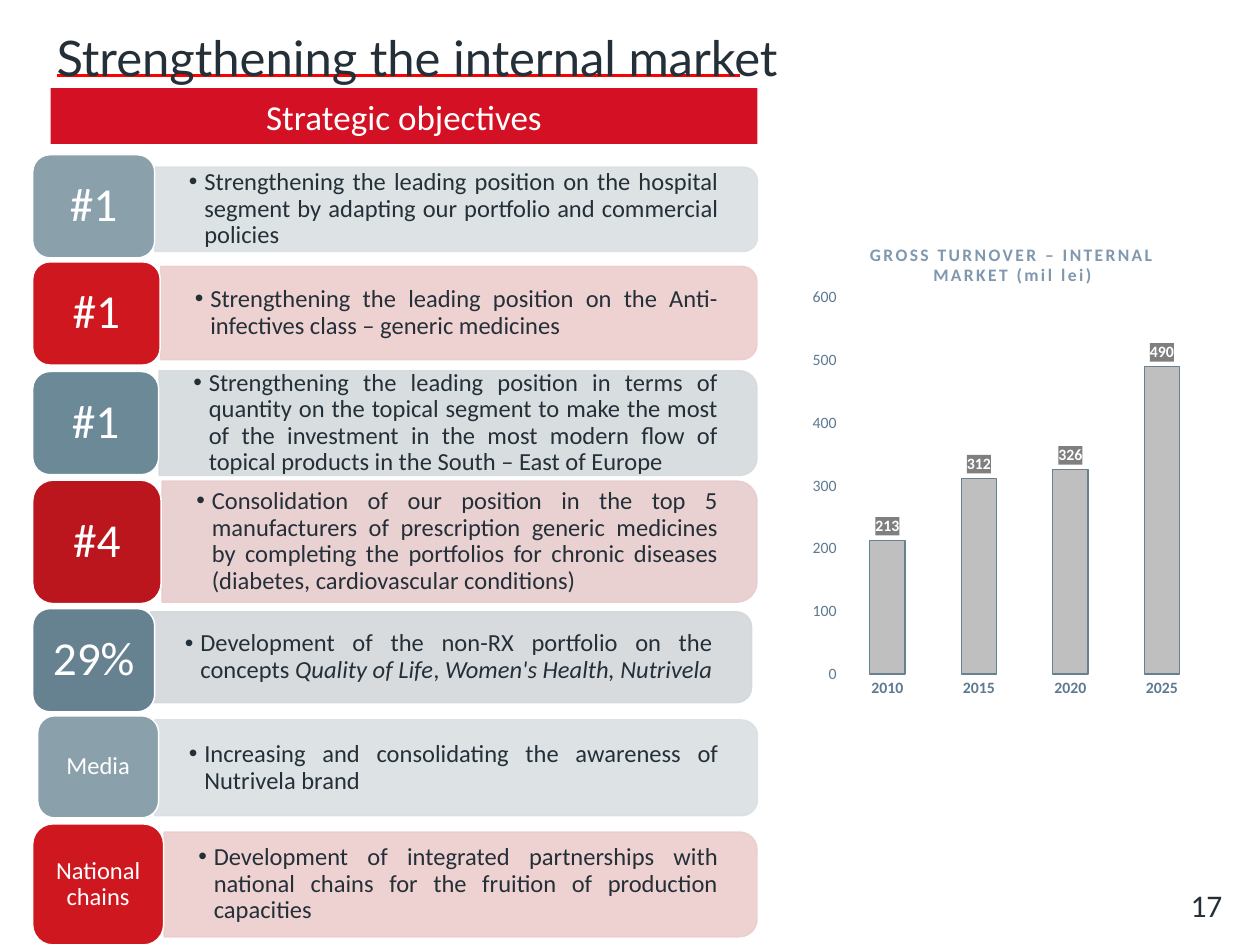
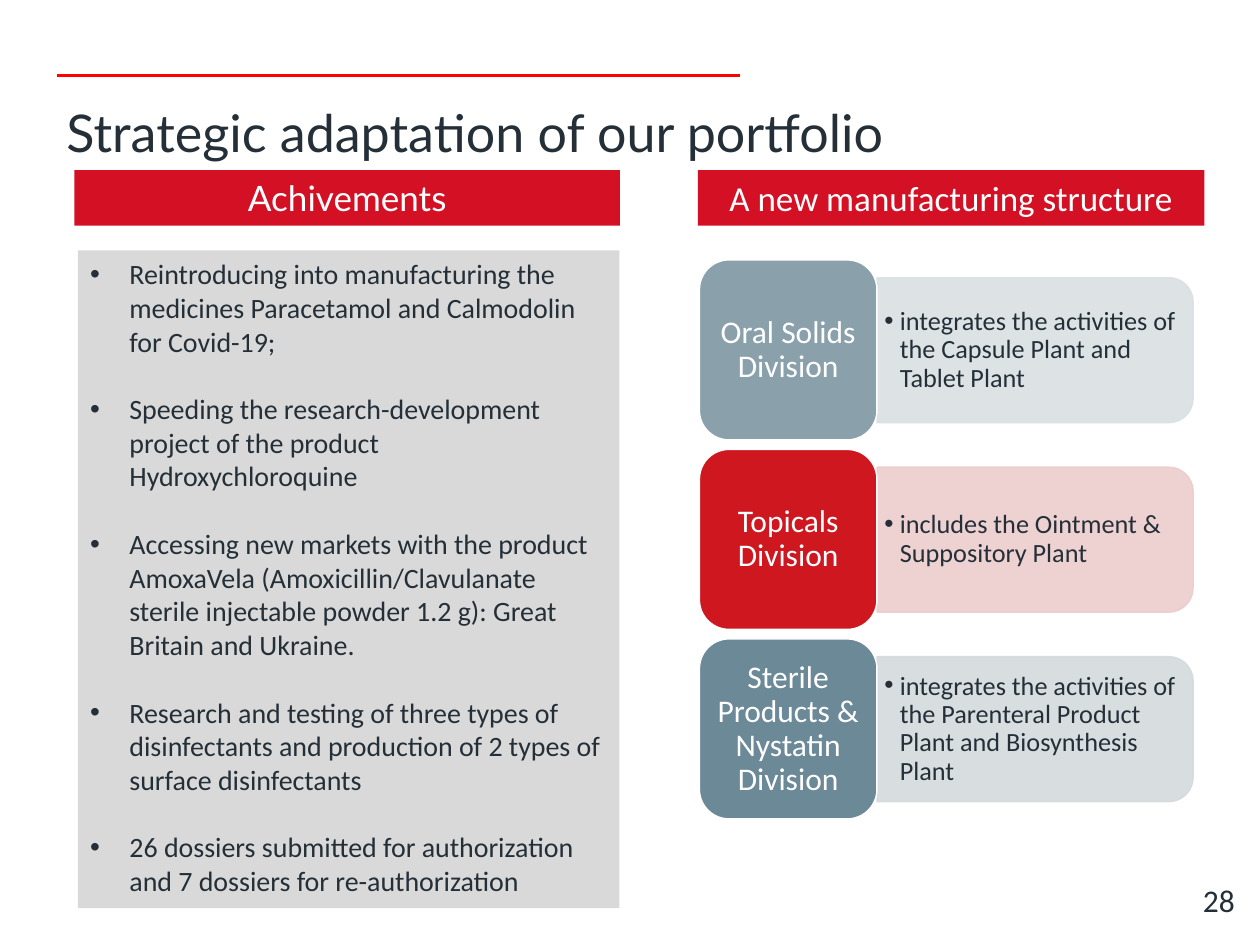
from dataclasses import dataclass

from lxml import etree
from pptx import Presentation
from pptx.chart.data import CategoryChartData
from pptx.dml.color import RGBColor
from pptx.enum import chart as ch, shapes, text
from pptx.oxml import parse_xml
from pptx.oxml.ns import nsdecls, qn
from pptx.util import Cm, Pt


@dataclass(frozen=True)
class Theme:
    # Fonts
    body_font: str = "Calibri"
    title_font: str = "Lato"
    # Colours
    ink: str = "242F38"
    white: str = "FFFFFF"
    rule: str = "FF0000"
    band: str = "D41024"
    panel: str = "D9D9D9"
    axis: str = "5D7A91"
    chart_title: str = "7F98AE"
    column: str = "BFBFBF"
    column_line: str = "668290"
    label_fill: str = "7F7F7F"
    # Tile and bar colour pairs
    mist: tuple = ("8AA1AC", "DAE0E3")
    red: tuple = ("CF1720", "EDCCCD")
    steel: tuple = ("6C8997", "D4DADD")
    dark_red: tuple = ("BB151D", "E7CCCD")
    slate: tuple = ("668290", "D3D8DB")
    # Type sizes
    band_size: float = 20
    number_size: float = 18
    rank_size: float = 27
    objective_size: float = 14
    division_size: float = 18
    activity_size: float = 15
    panel_size: float = 16
    chart_title_size: float = 10
    axis_size: float = 9


T = Theme()
ALIGN = text.PP_ALIGN
ANCHOR = text.MSO_ANCHOR


def rgb(value):
    return RGBColor.from_string(value)


def set_font(font, size, color, name=T.body_font, bold=None, italic=None):
    font.size, font.name, font.bold, font.italic = Pt(size), name, bold, italic
    font.color.rgb = rgb(color)


def add_bullet(p, indent):
    pPr = p._p.get_or_add_pPr()
    pPr.set("marL", str(Cm(indent)))
    pPr.set("indent", str(-Cm(indent)))
    etree.SubElement(pPr, qn("a:buFont")).set("typeface", "Arial")
    etree.SubElement(pPr, qn("a:buChar")).set("char", "•")


def add_runs(p, runs, size, color, name=T.body_font):
    """Add a string, or a list of (string, italic) pairs."""
    for words, italic in [(runs, None)] if isinstance(runs, str) else runs:
        r = p.add_run()
        r.text = words
        set_font(r.font, size, color, name, italic=italic)


def set_frame(tf, anchor, inset_x=0.25, inset_y=0.13):
    tf.word_wrap = True
    tf.auto_size = text.MSO_AUTO_SIZE.NONE
    tf.vertical_anchor = anchor
    tf.margin_left = tf.margin_right = Cm(inset_x)
    tf.margin_top = tf.margin_bottom = Cm(inset_y)


def add_shape(s, kind, box, fill, line=None):
    sp = s.shapes.add_shape(kind, *map(Cm, box))
    sp.shadow.inherit = False
    sp.fill.solid()
    sp.fill.fore_color.rgb = rgb(fill)
    if line:
        sp.line.color.rgb = rgb(line)
        sp.line.width = Pt(0.85)
    else:
        sp.line.fill.background()
    return sp


def add_textbox(s, box, anchor=ANCHOR.TOP, **insets):
    tf = s.shapes.add_textbox(*map(Cm, box)).text_frame
    set_frame(tf, anchor, **insets)
    return tf


def add_base(prs, title, title_box, title_size, number, number_box):
    """Slide with title, red rule behind it and page number."""
    s = prs.slides.add_slide(prs.slide_layouts[5])
    sp = s.shapes.title
    sp.left, sp.top, sp.width, sp.height = map(Cm, title_box)
    set_frame(sp.text_frame, ANCHOR.BOTTOM)
    p = sp.text_frame.paragraphs[0]
    p.alignment = ALIGN.LEFT
    add_runs(p, title, title_size, T.ink, T.title_font)

    rule = s.shapes.add_connector(shapes.MSO_CONNECTOR.STRAIGHT,
                                  Cm(1.14), Cm(1.52), Cm(14.91), Cm(1.52))
    rule.line.color.rgb = rgb(T.rule)
    rule.line.width = Pt(1.5)
    etree.SubElement(rule.element.spPr, qn("a:effectLst"))
    sp.element.addprevious(rule.element)

    tf = add_textbox(s, number_box)
    add_runs(tf.paragraphs[0], number, T.number_size, T.ink)
    return s


def add_band(s, box, words, font=T.body_font):
    sp = add_shape(s, shapes.MSO_SHAPE.RECTANGLE, box, T.band)
    set_frame(sp.text_frame, ANCHOR.MIDDLE)
    p = sp.text_frame.paragraphs[0]
    p.alignment = ALIGN.CENTER
    add_runs(p, words, T.band_size, T.white, font)


def add_bar(s, left, right, middle, height, color):
    """Bar rounded on its right side: a top-rounded shape turned by 90°."""
    width = right - left
    box = ((left + right - height) / 2, middle - width / 2, height, width)
    sp = add_shape(s, shapes.MSO_SHAPE.ROUND_2_SAME_RECTANGLE, box, color, color)
    sp.rotation = 90
    for clr in sp.element.spPr.iter(qn("a:srgbClr")):
        etree.SubElement(clr, qn("a:alpha")).set("val", "90000")


def add_tile_row(s, tile, bar, colors, label, label_size, runs, size, align, insets):
    """Tile is (left, top, width, height); bar is (left, right, middle, height)."""
    tile_color, bar_color = colors
    add_bar(s, *bar, bar_color)
    left, right, middle, height = bar
    text_height = height - 0.18
    tf = add_textbox(s, (left, middle - text_height / 2, right - left - 0.09, text_height),
                     ANCHOR.MIDDLE, **insets)
    p = tf.paragraphs[0]
    add_bullet(p, 0.31)
    p.alignment, p.line_spacing = align, 0.9
    add_runs(p, runs, size, T.ink)

    sp = add_shape(s, shapes.MSO_SHAPE.ROUNDED_RECTANGLE, tile, tile_color, T.white)
    set_frame(sp.text_frame, ANCHOR.MIDDLE, label_size * 0.01, label_size * 0.005)
    p = sp.text_frame.paragraphs[0]
    p.alignment, p.line_spacing = ALIGN.CENTER, 0.9
    add_runs(p, label, label_size, T.white)


def add_bullet_panel(s, box, items):
    sp = add_shape(s, shapes.MSO_SHAPE.RECTANGLE, box, T.panel)
    tf = sp.text_frame
    set_frame(tf, ANCHOR.TOP)
    for i, item in enumerate(items):
        p = tf.add_paragraph() if i else tf.paragraphs[0]
        add_bullet(p, 0.79)
        p.alignment = ALIGN.LEFT
        if i:
            p.space_before = Pt(19.5)
        add_runs(p, item, T.panel_size, T.ink)


def add_turnover_chart(s, box, title, years, values):
    data = CategoryChartData()
    data.categories = years
    data.add_series("Series 1", values)
    chart = s.shapes.add_chart(ch.XL_CHART_TYPE.COLUMN_CLUSTERED, *map(Cm, box), data).chart
    set_font(chart.font, T.chart_title_size, T.ink)
    chart.has_legend = False

    # Title with wide letter spacing
    chart.has_title = True
    p = chart.chart_title.text_frame.paragraphs[0]
    r = p.add_run()
    r.text = title
    set_font(r.font, T.chart_title_size, T.chart_title, bold=True)
    r.font._element.set("spc", "150")

    # Axes
    for axis, bold in ((chart.category_axis, True), (chart.value_axis, False)):
        axis.has_major_gridlines = False
        axis.major_tick_mark = axis.minor_tick_mark = ch.XL_TICK_MARK.NONE
        axis.format.line.fill.background()
        set_font(axis.tick_labels.font, T.axis_size, T.axis, bold=bold)
    axis = chart.value_axis
    axis.minimum_scale, axis.maximum_scale, axis.major_unit = 0, 600, 100
    axis.tick_labels.number_format = "0"
    axis.tick_labels.number_format_is_linked = False

    # Columns and their labels
    plot = chart.plots[0]
    plot.gap_width = 160
    plot.vary_by_categories = False
    fmt = plot.series[0].format
    fmt.fill.solid()
    fmt.fill.fore_color.rgb = rgb(T.column)
    fmt.line.color.rgb = rgb(T.column_line)
    fmt.line.width = Pt(0.75)
    labels = plot.series[0].data_labels
    labels.show_value = True
    labels.number_format, labels.number_format_is_linked = "0", False
    labels.position = ch.XL_LABEL_POSITION.OUTSIDE_END
    set_font(labels.font, T.axis_size, T.white, bold=True)
    labels._element.find(qn("c:txPr")).addprevious(parse_xml(
        f'<c:spPr {nsdecls("c", "a")}><a:solidFill><a:srgbClr val="{T.label_fill}"/>'
        "</a:solidFill></c:spPr>"))

    # Fixed inner plot area
    area = chart._chartSpace.chart.plotArea
    for old in area.findall(qn("c:layout")):
        area.remove(old)
    parts = (("layoutTarget", "inner"), ("xMode", "edge"), ("yMode", "edge"),
             ("x", 0.08), ("y", 0.15), ("w", 0.9), ("h", 0.77))
    layout = etree.Element(qn("c:layout"))
    manual = etree.SubElement(layout, qn("c:manualLayout"))
    for tag, val in parts:
        etree.SubElement(manual, qn(f"c:{tag}")).set("val", str(val))
    area.insert(0, layout)


def build_market_slide(prs):
    s = add_base(prs, "Strengthening the internal market", (0.89, -0.08, 22.86, 1.96), 28,
                 "17", (23.75, 17.73, 1.6, 0.94))
    rank, small = T.rank_size, T.objective_size
    rows = [
        ((0.66, 3.12, 2.46, 2.08), (3.12, 15.27, 4.22, 1.7), T.mist, "#1", rank,
         "Strengthening the leading position on the hospital segment by adapting "
         "our portfolio and commercial policies"),
        ((0.66, 5.28, 2.57, 2.08), (3.24, 15.26, 6.31, 1.88), T.red, "#1", rank,
         "Strengthening the leading position on the Anti-infectives class – generic medicines"),
        ((0.66, 7.49, 2.54, 2.08), (3.21, 15.26, 8.53, 2.11), T.steel, "#1", rank,
         "Strengthening the leading position in terms of quantity on the topical segment "
         "to make the most of the investment in the most modern flow of topical products "
         "in the South – East of Europe"),
        ((0.66, 9.68, 2.59, 2.49), (3.27, 15.26, 10.92, 2.44), T.dark_red, "#4", rank,
         "Consolidation of our position in the top 5 manufacturers of prescription generic "
         "medicines by completing the portfolios for chronic diseases (diabetes, "
         "cardiovascular conditions)"),
        ((0.66, 12.27, 2.46, 2.08), (3.04, 15.15, 13.25, 1.83), T.slate, "29%", rank,
         [("Development of the non-RX portfolio on the concepts ", None),
          ("Quality of Life", True), (", ", None), ("Women's Health, Nutrivela", True)]),
        ((0.76, 14.43, 2.44, 2.06), (3.12, 15.27, 15.48, 1.93), T.mist, "Media", small,
         "Increasing and consolidating the awareness of Nutrivela brand"),
        ((0.66, 16.61, 2.64, 2.44), (3.31, 15.26, 17.83, 2.11), T.red, "National chains", small,
         "Development of integrated partnerships with national chains for the fruition "
         "of production capacities"),
    ]
    for row in rows:
        add_tile_row(s, *row, T.objective_size, ALIGN.JUSTIFY,
                     dict(inset_x=0.69, inset_y=0.36))
    add_turnover_chart(s, (16.31, 4.52, 8.2, 9.86), "GROSS TURNOVER – INTERNAL MARKET (mil lei)",
                       ("2010", "2015", "2020", "2025"), (213, 312, 326, 490))
    add_band(s, (1.02, 1.78, 14.25, 1.12), "Strategic objectives")


def build_portfolio_slide(prs):
    s = add_base(prs, "Strategic adaptation of our portfolio", (1.09, 2.34, 22.91, 1.07), 29.7,
                 "28", (24, 17.63, 1.32, 1.07))
    add_band(s, (1.5, 3.43, 11, 1.12), "Achivements", T.title_font)
    add_band(s, (14.07, 3.43, 10.21, 1.12), "A new manufacturing structure")

    # Divisions at equal steps
    divisions = [
        (T.mist, "Oral Solids Division",
         "integrates the activities of the Capsule Plant and Tablet Plant"),
        (T.red, "Topicals Division", "includes the Ointment & Suppository Plant"),
        (T.steel, "Sterile Products & Nystatin Division",
         "integrates the activities of the Parenteral Product Plant and Biosynthesis Plant"),
    ]
    for i, (colors, name, activity) in enumerate(divisions):
        top = 5.24 + 3.82 * i
        add_tile_row(s, (14.1, top, 3.58, 3.63), (17.68, 24.05, top + 1.82, 2.92), colors,
                     name, T.division_size, activity, T.activity_size, ALIGN.LEFT,
                     dict(inset_x=0.15, inset_y=0.08))

    add_bullet_panel(s, (1.57, 5.05, 10.92, 13.26), [
        "Reintroducing into manufacturing the medicines Paracetamol and Calmodolin "
        "for Covid-19;",
        "Speeding the research-development project of the product Hydroxychloroquine",
        "Accessing new markets with the product AmoxaVela (Amoxicillin/Clavulanate sterile "
        "injectable powder 1.2 g): Great Britain and Ukraine.",
        "Research and testing of three types of disinfectants and production of 2 types of "
        "surface disinfectants",
        "26 dossiers submitted for authorization and 7 dossiers for re-authorization",
    ])


def main():
    prs = Presentation()
    prs.slide_width, prs.slide_height = Cm(25.4), Cm(19.05)
    build_market_slide(prs)
    build_portfolio_slide(prs)
    prs.save("out.pptx")


if __name__ == "__main__":
    main()
